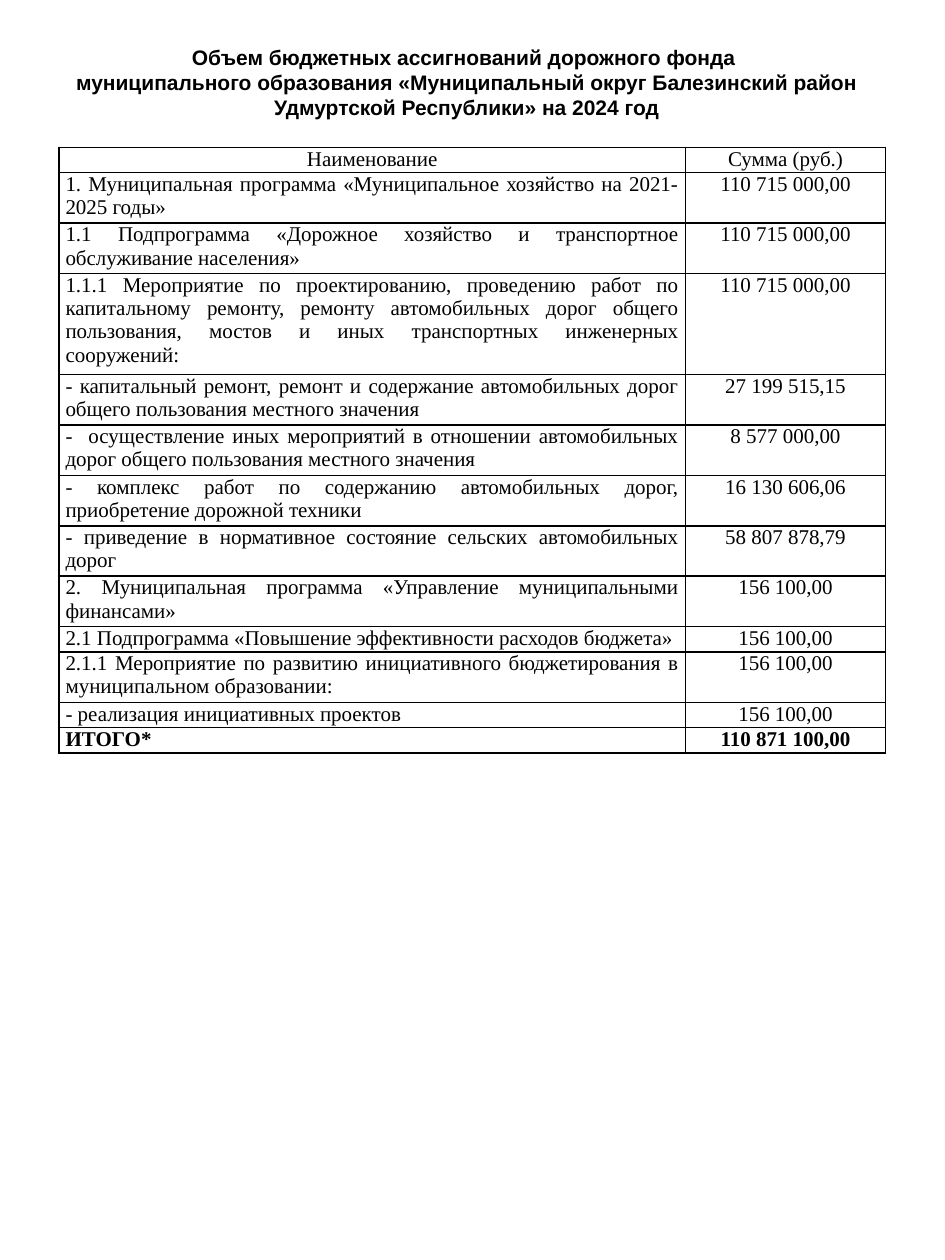
import pptx
import pptx.dml.color
import pptx.enum.text
import pptx.oxml
import pptx.oxml.ns
import pptx.util
from pptx.util import Inches

ALIGN = pptx.enum.text.PP_ALIGN
BLACK = "000000"
LINE_HEIGHT = 0.2
COLUMN_WIDTHS = (4.97, 1.59)

TITLE = (
    "Объем бюджетных ассигнований дорожного фонда ",
    "муниципального образования «Муниципальный округ Балезинский район "
    "Удмуртской Республики» на 2024 год",
)

# Name, amount, number of text lines
BUDGET_ROWS = (
    ("Наименование", "Сумма (руб.)", 1),
    ("1. Муниципальная программа «Муниципальное хозяйство на 2021-2025 годы»",
     "110 715 000,00", 2),
    ("1.1 Подпрограмма «Дорожное хозяйство и транспортное обслуживание населения»",
     "110 715 000,00", 2),
    ("1.1.1 Мероприятие по проектированию, проведению работ по капитальному ремонту, "
     "ремонту автомобильных дорог общего пользования, мостов и иных транспортных "
     "инженерных сооружений:", "110 715 000,00", 4),
    ("- капитальный ремонт, ремонт и содержание автомобильных дорог общего пользования "
     "местного значения", "27 199 515,15", 2),
    ("-  осуществление иных мероприятий в отношении автомобильных дорог общего "
     "пользования местного значения", "8 577 000,00", 2),
    ("- комплекс работ по содержанию автомобильных дорог, приобретение дорожной техники",
     "16 130 606,06", 2),
    ("- приведение в нормативное состояние сельских автомобильных дорог",
     "58 807 878,79", 2),
    ("2. Муниципальная программа «Управление муниципальными финансами»",
     "156 100,00", 2),
    ("2.1 Подпрограмма «Повышение эффективности расходов бюджета»", "156 100,00", 1),
    ("2.1.1 Мероприятие по развитию инициативного бюджетирования в муниципальном "
     "образовании:", "156 100,00", 2),
    ("- реализация инициативных проектов", "156 100,00", 1),
    ("ИТОГО*", "110 871 100,00", 1),
)


def color(value):
    return pptx.dml.color.RGBColor.from_string(value)


def write(para, text, font, align, bold=False):
    para.alignment = align
    span = para.add_run()
    span.text = text
    span.font.name = font
    span.font.size = pptx.util.Pt(12)
    span.font.bold = bold
    span.font.color.rgb = color(BLACK)


def add_title(page):
    box = page.shapes.add_textbox(Inches(0.28), Inches(0), Inches(6.85), Inches(1.19))
    frame = box.text_frame
    frame.word_wrap = True
    frame.vertical_anchor = pptx.enum.text.MSO_ANCHOR.MIDDLE
    frame.margin_top = Inches(0.16)
    frame.margin_bottom = Inches(0.05)
    for index, text in enumerate(TITLE):
        para = frame.add_paragraph() if index else frame.paragraphs[0]
        write(para, text, "Arial", ALIGN.CENTER, bold=True)


def add_borders(cell):
    """Draw a 1 pt line on all four sides; borders must precede the fill."""
    properties = cell._tc.get_or_add_tcPr()
    for index, side in enumerate(("lnL", "lnR", "lnT", "lnB")):
        properties.insert(index, pptx.oxml.parse_xml(
            f'<a:{side} {pptx.oxml.ns.nsdecls("a")} w="12700">'
            f'<a:solidFill><a:srgbClr val="{BLACK}"/></a:solidFill></a:{side}>'))


def fill_cell(cell, text, align, bold):
    cell.margin_left = cell.margin_right = Inches(0.05)
    cell.margin_top = cell.margin_bottom = Inches(0)
    cell.fill.background()
    add_borders(cell)
    write(cell.text_frame.paragraphs[0], text, "Times New Roman", align, bold)


def add_budget_table(page):
    height = LINE_HEIGHT * sum(lines for _, _, lines in BUDGET_ROWS)
    table = page.shapes.add_table(
        len(BUDGET_ROWS), len(COLUMN_WIDTHS), Inches(0.47), Inches(1.17),
        Inches(sum(COLUMN_WIDTHS)), Inches(height)).table
    table.first_row = False
    table.horz_banding = False
    for column, width in zip(table.columns, COLUMN_WIDTHS):
        column.width = Inches(width)
    last = len(BUDGET_ROWS) - 1
    for index, (name, amount, lines) in enumerate(BUDGET_ROWS):
        table.rows[index].height = Inches(LINE_HEIGHT * lines)
        name_align = ALIGN.JUSTIFY if index else ALIGN.CENTER
        bold = index == last
        fill_cell(table.cell(index, 0), name, name_align, bold)
        fill_cell(table.cell(index, 1), amount, ALIGN.CENTER, bold)


def main():
    deck = pptx.Presentation()
    deck.slide_width = Inches(7.5)
    deck.slide_height = Inches(10)
    page = deck.slides.add_slide(deck.slide_layouts[6])
    add_title(page)
    add_budget_table(page)
    deck.save("out.pptx")


if __name__ == "__main__":
    main()
